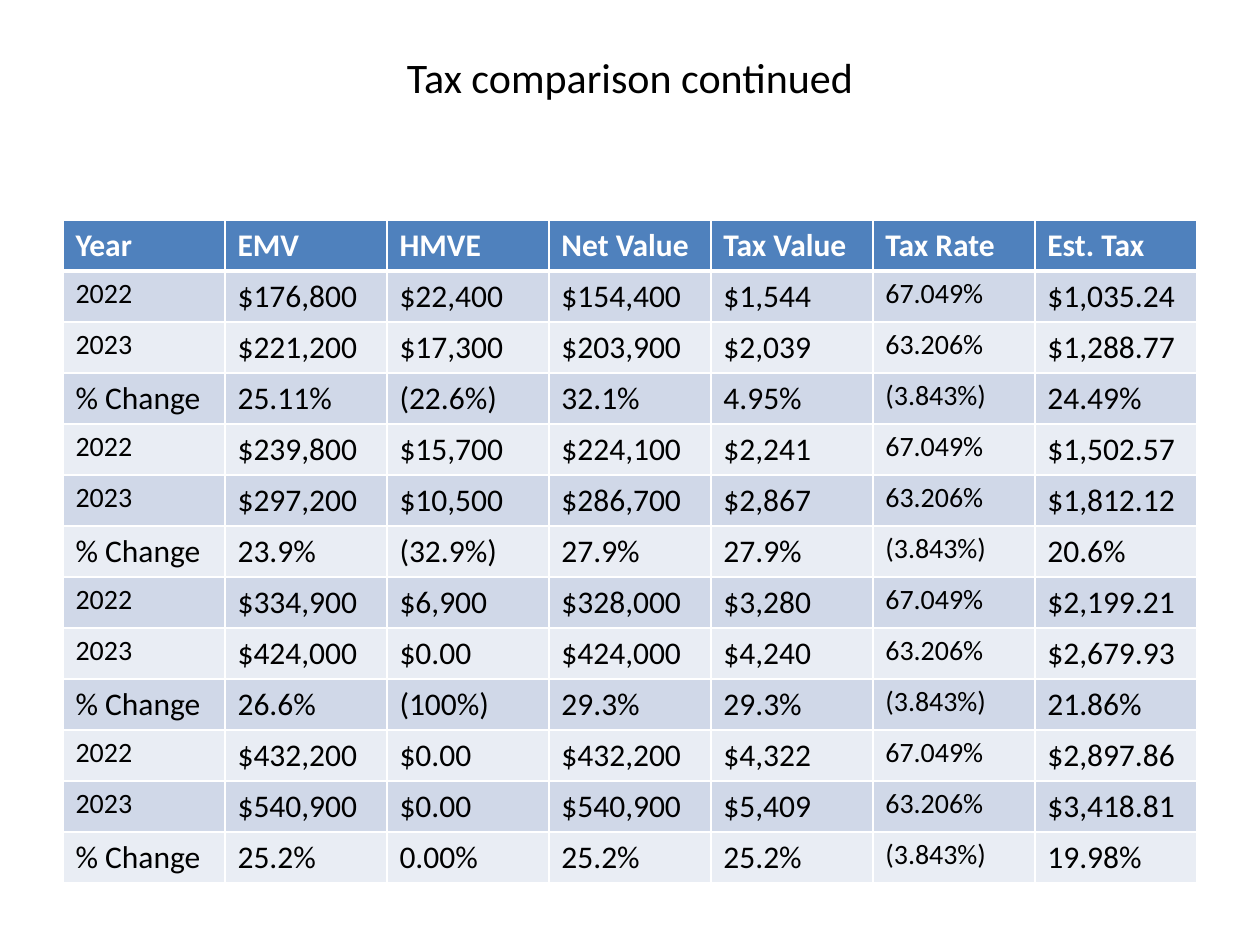
"""Build the tax comparison slide with its table of yearly values."""
from lxml import etree
from pptx import Presentation
from pptx.dml.color import RGBColor
from pptx.enum.text import MSO_ANCHOR, PP_ALIGN
from pptx.oxml.ns import qn
from pptx.util import Pt

MIDDLE = MSO_ANCHOR.MIDDLE
CENTER = PP_ALIGN.CENTER
SCALE = 914400 / 126
FONT = "Calibri"
COLORS = {
    "text": "000000",
    "white": "FFFFFF",
    "header": "4F81BD",
    "odd_row": "D0D8E8",
    "even_row": "E9EDF4",
}
ROWS = [
    ["Year", "EMV", "HMVE", "Net Value", "Tax Value", "Tax Rate", "Est. Tax"],
    ["2022", "$176,800", "$22,400", "$154,400", "$1,544", "67.049%", "$1,035.24"],
    ["2023", "$221,200", "$17,300", "$203,900", "$2,039", "63.206%", "$1,288.77"],
    ["% Change", "25.11%", "(22.6%)", "32.1%", "4.95%", "(3.843%)", "24.49%"],
    ["2022", "$239,800", "$15,700", "$224,100", "$2,241", "67.049%", "$1,502.57"],
    ["2023", "$297,200", "$10,500", "$286,700", "$2,867", "63.206%", "$1,812.12"],
    ["% Change", "23.9%", "(32.9%)", "27.9%", "27.9%", "(3.843%)", "20.6%"],
    ["2022", "$334,900", "$6,900", "$328,000", "$3,280", "67.049%", "$2,199.21"],
    ["2023", "$424,000", "$0.00", "$424,000", "$4,240", "63.206%", "$2,679.93"],
    ["% Change", "26.6%", "(100%)", "29.3%", "29.3%", "(3.843%)", "21.86%"],
    ["2022", "$432,200", "$0.00", "$432,200", "$4,322", "67.049%", "$2,897.86"],
    ["2023", "$540,900", "$0.00", "$540,900", "$5,409", "63.206%", "$3,418.81"],
    ["% Change", "25.2%", "0.00%", "25.2%", "25.2%", "(3.843%)", "19.98%"],
]
RATE_COLUMN = ROWS[0].index("Tax Rate")
ROW_HEIGHT = 51
COLUMN_WIDTH = 162


def px(*lengths):
    return [round(length * SCALE) for length in lengths]


def write_text(text_frame, text, color, **font_format):
    paragraph = text_frame.paragraphs[0]
    run = paragraph.add_run()
    run.text = text
    for name, value in {"name": FONT, **font_format}.items():
        setattr(run.font, name, value)
    run.font.color.rgb = RGBColor.from_string(COLORS[color])
    return paragraph


presentation = Presentation()
presentation.slide_width, presentation.slide_height = px(1260, 945)
slide = presentation.slides.add_slide(presentation.slide_layouts[6])

title = slide.shapes.add_textbox(*px(63, 38, 1134, 78))
title.text_frame.word_wrap = True
title.text_frame.vertical_anchor = MIDDLE
paragraph = write_text(title.text_frame, "Tax comparison continued", "text", size=Pt(24))
paragraph.alignment = CENTER

table_size = COLUMN_WIDTH * len(ROWS[0]), ROW_HEIGHT * len(ROWS)
table = slide.shapes.add_table(len(ROWS), len(ROWS[0]), *px(63, 220, *table_size)).table
for column in table.columns:
    column.width = px(COLUMN_WIDTH)[0]
for row in table.rows:
    row.height = px(ROW_HEIGHT)[0]

for row_index, values in enumerate(ROWS):
    is_header = row_index == 0
    row_color = "header" if is_header else "odd_row" if row_index % 2 else "even_row"
    border_widths = {
        "lnL": 1,
        "lnR": 1,
        "lnT": 3 if row_index == 1 else 1,
        "lnB": 3 if is_header else 1,
    }
    for column_index, value in enumerate(values):
        cell = table.cell(row_index, column_index)
        is_small = not is_header and (column_index == RATE_COLUMN or value in ("2022", "2023"))
        write_text(
            cell.text_frame,
            value,
            "white" if is_header else "text",
            size=Pt(16 if is_small else 18),
            bold=is_header,
        )
        properties = cell._tc.get_or_add_tcPr()
        for tag, width in border_widths.items():
            border = etree.SubElement(properties, qn(f"a:{tag}"), w=str(Pt(width)))
            border_fill = etree.SubElement(border, qn("a:solidFill"))
            etree.SubElement(border_fill, qn("a:srgbClr"), val=COLORS["white"])
        cell.fill.solid()
        cell.fill.fore_color.rgb = RGBColor.from_string(COLORS[row_color])

presentation.save("out.pptx")
